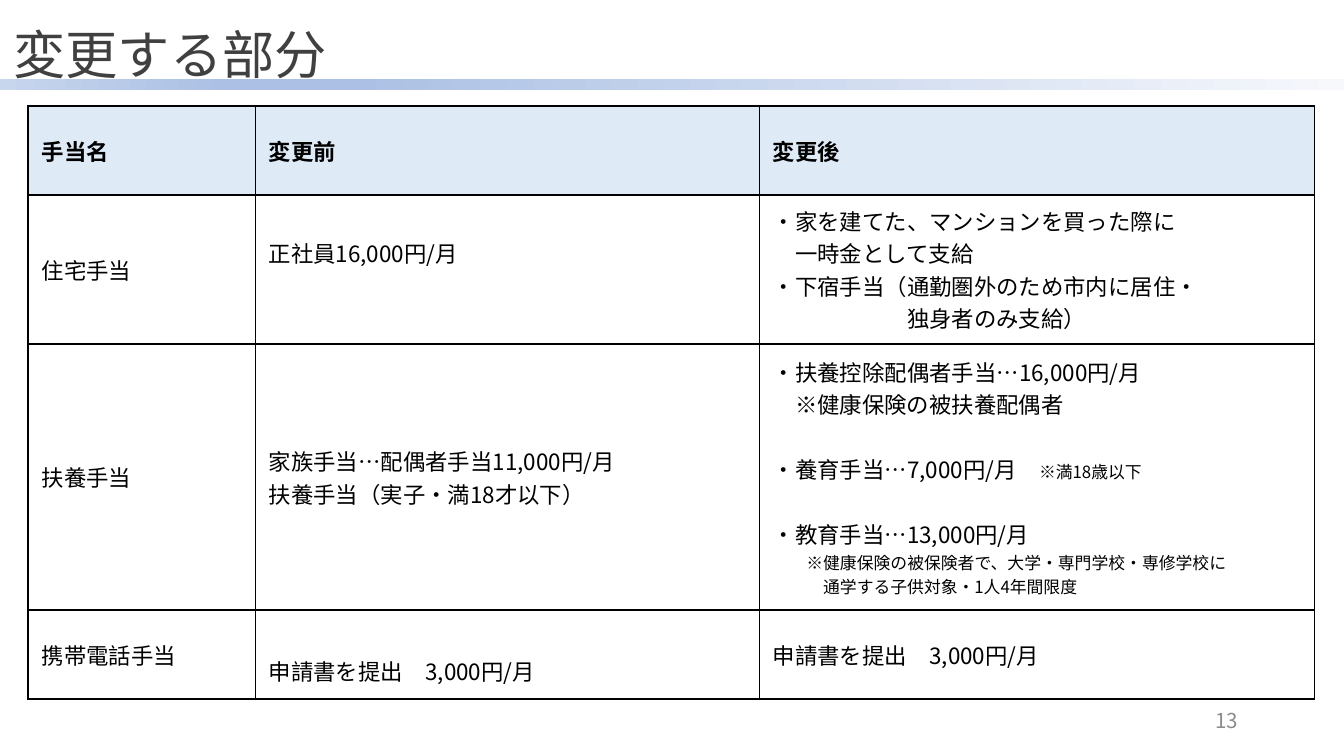
"""Build a slide comparing allowances before and after a revision."""
from dataclasses import dataclass

from lxml import etree
from pptx import Presentation
from pptx.dml.color import RGBColor
from pptx.enum import shapes, text
from pptx.oxml import ns
from pptx.util import Inches, Pt


@dataclass(frozen=True)
class Theme:
    font: str = "Noto Sans CJK JP"
    title_size: float = 28
    body_size: float = 12
    note_size: float = 9
    number_size: float = 11
    title_color: str = "404040"
    number_color: str = "8C8C8C"
    ink: str = "000000"
    header_fill: str = "DEEBF7"
    border_width: float = 1
    blank_line: float = 17.4
    band_stops: tuple = ((0, "F6F8FC"), (74, "ABC0E4"), (83, "ABC0E4"), (100, "C7D5ED"))


THEME = Theme()


@dataclass(frozen=True)
class Line:
    text: str
    note: str = ""
    size: float = THEME.body_size
    indent: int = 0
    gap: bool = False
    bold: bool = False


@dataclass(frozen=True)
class Entry:
    lines: tuple
    lines_above: int = 0
    lines_below: int = 0


def entry(*lines: str, bold: bool = False, above: int = 0, below: int = 0) -> Entry:
    """Make a table entry from plain lines."""
    return Entry(tuple(Line(line, bold=bold) for line in lines), above, below)


COLUMN_WIDTHS = (1.69, 3.75, 4.13)
ROW_HEIGHTS = (0.66, 1.11, 1.98, 0.66)
ROWS = (
    tuple(entry(name, bold=True) for name in ("手当名", "変更前", "変更後")),
    (
        entry("住宅手当"),
        entry("正社員16,000円/月", below=1),
        Entry((
            Line("・家を建てた、マンションを買った際に"),
            Line("一時金として支給", indent=1),
            Line("・下宿手当（通勤圏外のため市内に居住・"),
            Line("独身者のみ支給）", indent=6),
        )),
    ),
    (
        entry("扶養手当"),
        entry("家族手当…配偶者手当11,000円/月", "扶養手当（実子・満18才以下）"),
        Entry((
            Line("・扶養控除配偶者手当…16,000円/月"),
            Line("※健康保険の被扶養配偶者", indent=1),
            Line("・養育手当…7,000円/月　", note="※満18歳以下", gap=True),
            Line("・教育手当…13,000円/月", gap=True),
            Line("※健康保険の被保険者で、大学・専門学校・専修学校に", size=THEME.note_size, indent=2),
            Line("通学する子供対象・1人4年間限度", size=THEME.note_size, indent=3),
        )),
    ),
    (
        entry("携帯電話手当"),
        entry("申請書を提出　3,000円/月", above=1),
        entry("申請書を提出　3,000円/月"),
    ),
)


def style_font(font, size: float, color: str, bold: bool = False) -> None:
    """Set size, colour, weight and both Latin and East Asian typefaces."""
    font.size, font.bold, font.name = Pt(size), bold, THEME.font
    font.color.rgb = RGBColor.from_string(color)
    east_asian = etree.Element(ns.qn("a:ea"), typeface=THEME.font)
    font._element.find(ns.qn("a:latin")).addnext(east_asian)


def place(shape, left: float, top: float, width: float, height: float) -> None:
    """Move and size a shape in inches."""
    shape.left, shape.top = Inches(left), Inches(top)
    shape.width, shape.height = Inches(width), Inches(height)


def draw_band(slide) -> None:
    """Draw the gradient band below the title."""
    band = slide.shapes.add_shape(
        shapes.MSO_SHAPE.RECTANGLE, 0, Inches(0.59), Inches(10), Inches(0.08))
    band.shadow.inherit = False
    band.line.fill.background()
    band.fill.gradient()
    band.fill.gradient_angle = 180
    stops = band._element.spPr.find(".//" + ns.qn("a:gsLst"))
    for stop in list(stops):
        stops.remove(stop)
    for position, color in THEME.band_stops:
        stop = etree.SubElement(stops, ns.qn("a:gs"), pos=str(position * 1000))
        etree.SubElement(stop, ns.qn("a:srgbClr"), val=color)


def draw_title(slide, wording: str) -> None:
    """Fill and place the title placeholder."""
    title = slide.shapes.title
    place(title, 0, -0.08, 8.3, 0.72)
    title.text_frame.text = wording
    title.text_frame.vertical_anchor = text.MSO_ANCHOR.MIDDLE
    paragraph = title.text_frame.paragraphs[0]
    paragraph.alignment = text.PP_ALIGN.LEFT
    paragraph.line_spacing = 1.5
    style_font(paragraph.font, THEME.title_size, THEME.title_color)


def draw_page_number(slide, number: int) -> None:
    """Write the page number at the lower right."""
    box = slide.shapes.add_textbox(Inches(7.06), Inches(5.21), Inches(2.25), Inches(0.3))
    box.text_frame.word_wrap = True
    box.text_frame.vertical_anchor = text.MSO_ANCHOR.MIDDLE
    paragraph = box.text_frame.paragraphs[0]
    paragraph.text = str(number)
    paragraph.alignment = text.PP_ALIGN.RIGHT
    style_font(paragraph.font, THEME.number_size, THEME.number_color)


def add_borders(cell) -> None:
    """Outline all four sides of a cell."""
    properties = cell._tc.get_or_add_tcPr()
    for index, side in enumerate(("lnL", "lnR", "lnT", "lnB")):
        line = etree.Element(ns.qn(f"a:{side}"), w=str(Pt(THEME.border_width)))
        fill = etree.SubElement(line, ns.qn("a:solidFill"))
        etree.SubElement(fill, ns.qn("a:srgbClr"), val=THEME.ink)
        properties.insert(index, line)


def write_line(paragraph, line: Line) -> None:
    """Write one line, indented by whole characters."""
    paragraph.add_run().text = line.text
    style_font(paragraph.font, line.size, THEME.ink, line.bold)
    if line.note:
        note = paragraph.add_run()
        note.text = line.note
        note.font.size = Pt(THEME.note_size)
    if line.indent:
        properties = paragraph._p.get_or_add_pPr()
        properties.set("marL", str(Pt(line.indent * line.size)))
        properties.set("indent", "0")
    if line.gap:
        paragraph.space_before = Pt(THEME.blank_line)


def fill_cell(cell, content: Entry, header: bool) -> None:
    """Write and style one table cell."""
    cell.vertical_anchor = text.MSO_ANCHOR.MIDDLE
    cell.margin_top = Inches(0.05) + Pt(content.lines_above * THEME.blank_line)
    cell.margin_bottom = Inches(0.05) + Pt(content.lines_below * THEME.blank_line)
    if header:
        cell.fill.solid()
        cell.fill.fore_color.rgb = RGBColor.from_string(THEME.header_fill)
    else:
        cell.fill.background()
    add_borders(cell)
    frame = cell.text_frame
    for index, line in enumerate(content.lines):
        write_line(frame.add_paragraph() if index else frame.paragraphs[0], line)


def draw_table(slide) -> None:
    """Draw the allowance table."""
    table = slide.shapes.add_table(
        len(ROWS), len(COLUMN_WIDTHS), Inches(0.21), Inches(0.79),
        Inches(sum(COLUMN_WIDTHS)), Inches(sum(ROW_HEIGHTS))).table
    table.horz_banding = False
    for column, width in zip(table.columns, COLUMN_WIDTHS):
        column.width = Inches(width)
    for index, (row, height, contents) in enumerate(zip(table.rows, ROW_HEIGHTS, ROWS)):
        row.height = Inches(height)
        for cell, content in zip(row.cells, contents):
            fill_cell(cell, content, header=index == 0)


def main() -> None:
    """Build and save the presentation."""
    presentation = Presentation()
    presentation.slide_width = Inches(10)
    presentation.slide_height = presentation.slide_width * 9 // 16
    slide = presentation.slides.add_slide(presentation.slide_layouts.get_by_name("Title Only"))
    draw_band(slide)
    draw_page_number(slide, 13)
    draw_title(slide, "変更する部分")
    draw_table(slide)
    presentation.save("out.pptx")


if __name__ == "__main__":
    main()
